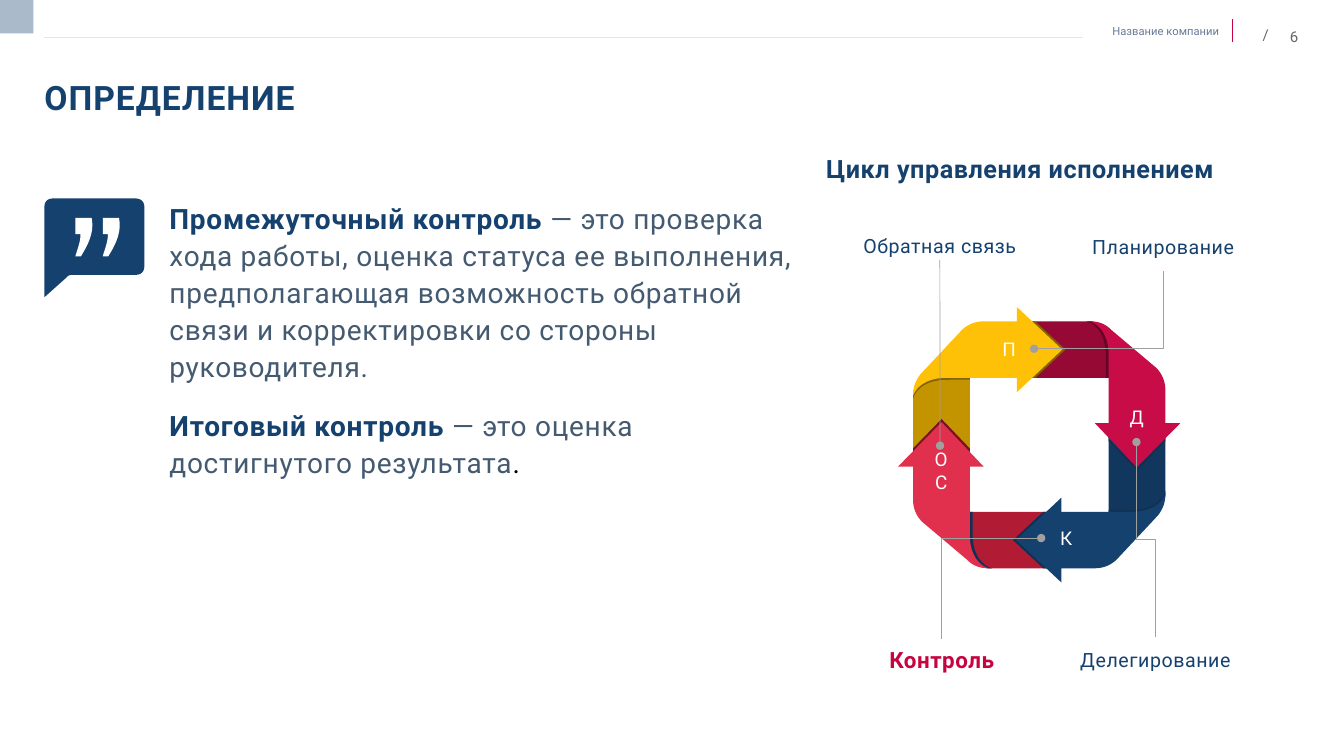
from lxml.etree import SubElement
from pptx import Presentation
from pptx.dml.color import RGBColor
from pptx.enum.shapes import MSO_CONNECTOR as Link, MSO_SHAPE as Shape
from pptx.enum.text import MSO_ANCHOR as Anchor, MSO_AUTO_SIZE as Fit, PP_ALIGN as Align
from pptx.oxml.ns import qn
from pptx.util import Cm, Pt

NAVY, RED, SLATE, WHITE, GREY = "15416F", "C60440", "445A71", "FFFFFF", "A0A0A0"
DEEP = "103153"

TITLE = "ОПРЕДЕЛЕНИЕ"
BODY = [
    [("Промежуточный контроль ", NAVY, True),
     ("— это проверка хода работы, оценка статуса ее выполнения, предполагающая "
      "возможность обратной связи и корректировки со стороны руководителя.", SLATE, False)],
    [("Итоговый контроль ", NAVY, True),
     ("— это оценка достигнутого результата", SLATE, False),
     (".", "000000", False)],
]

# text, box in cm, size, colour, bold, spacing, alignment, anchor, inset
HEAD = [
    ("Название компании", (27.25, 0.61, 3.48, 0.33), 8, "697A98", 0, Align.RIGHT, Anchor.MIDDLE, 0),
    ("6", (31.65, 0.76, 1.07, 0.33), 10.7, "666666", 40, Align.RIGHT, Anchor.MIDDLE, 0),
    ("/", (31.57, 0.51, 0.66, 0.71), 10.7, "666666", 0, Align.LEFT, Anchor.TOP, None),
]
RULES = [((31.06, 0.48), (31.06, 1.07), RED, 0.5),
         ((27.28, 0.94), (1.12, 0.94), "E7E6E6", 0.75)]
CYCLE = "Цикл управления исполнением"

# label, box, size, colour, bold, connector, start, end, turn, side of label joined
STAGES = [
    ("Контроль", (21.36, 16.1, 4.75, 0.94), 16, RED, True,
     "bentConnector2", (26.24, 13.56), (23.73, 16.1), 0, 0),
    ("Планирование", (26.47, 5.74, 5.69, 1.09), 14, NAVY, False,
     "bentConnector2", (26.06, 8.79), (29.31, 6.83), 0, 2),
    ("Делегирование", (26.06, 16.15, 6.12, 0.91), 14, NAVY, False,
     "bentConnector3", (31.34, 13.36), (26.42, 13.84), 270, None),
    ("Обратная связь", (21.31, 5.72, 4.75, 0.83), 14, NAVY, False,
     "line", (23.69, 11.23), (23.69, 6.55), 0, 2),
]
LETTERS = [("Д", 28.64, 10.5), ("П", 25.43, 8.8), ("ОС", 23.72, 11.85), ("К", 26.87, 13.55)]
BOX = 0.84

# Outlines: two numbers are a corner, six are a Bezier curve.
BUBBLE = [(1.12, 7.49), (1.68, 6.99), (1.73, 6.94, 1.75, 6.93, 1.8, 6.93), (3.38, 6.93),
          (3.56, 6.93, 3.64, 6.86, 3.64, 6.68), (3.64, 5.23),
          (3.64, 5.08, 3.56, 5, 3.38, 5), (1.37, 5), (1.19, 5, 1.12, 5.08, 1.12, 5.23)]
QUOTE = [(0, 0), (0.41, 0), (0.48, 0.36, 0.33, 0.66, 0.14, 0.97), (0, 0.97),
         (0.05, 0.79, 0.13, 0.61, 0.13, 0.41), (0, 0.41)]
QUOTES = [(1.9, 5.49), (2.59, 5.49)]

# Ring parts about the ring's centre: colour, colour of the half-turned twin, outline
CENTRE = (26.19, 11.21)
RING = [
    ("960935", "B11B33", [(1.8, -1.69), (-0.28, -1.69), (-0.28, -3.11), (1.27, -3.11),
                          (1.57, -3.11, 1.8, -2.86, 1.8, -2.58)]),
    ("C49300", "12375E", [(-1.75, -1.77), (-1.75, 0.27), (-3.18, 0.27), (-3.18, -1.23),
                          (-3.18, -1.51, -2.95, -1.77, -2.64, -1.77)]),
    ("836200", DEEP, [(-2.64, -1.74), (-1.75, -1.74), (-1.75, -1.64), (-2.24, -1.64),
                      (-2.9, -1.66, -3.12, -1.36, -3.18, -1.16), (-3.18, -1.24),
                      (-3.15, -1.54, -2.92, -1.74, -2.64, -1.74)]),
    ("640624", DEEP, [(1.8, -2.58), (1.8, -1.69), (1.68, -1.69), (1.68, -2.17),
                      (1.7, -2.81, 1.4, -3.06, 1.19, -3.11), (1.3, -3.11),
                      (1.57, -3.09, 1.8, -2.86, 1.8, -2.58)]),
    ("836200", DEEP, [(-0.1, -1.69), (-0.25, -1.69), (-0.25, -3.11), (-0.1, -3.11),
                      (0.66, -2.4)]),
    ("761222", DEEP, [(-3.18, 0.09), (-2.46, -0.65), (-1.75, 0.09), (-1.75, 0.27),
                      (-3.18, 0.27)]),
    ("FFC107", NAVY, [(-3, -1.77), (-1.98, -2.86), (-1.85, -3.01, -1.63, -3.11, -1.42, -3.11),
                      (-0.56, -3.11), (-0.56, -3.47), (0.58, -2.4), (-0.56, -1.33),
                      (-0.56, -1.69), (-2.24, -1.69),
                      (-2.9, -1.71, -3.12, -1.41, -3.18, -1.23), (-3.18, -1.26),
                      (-3.18, -1.44, -3.12, -1.61, -3, -1.77)]),
    ("C80C47", "E0304D", [(1.75, -2.17), (1.78, -2.81, 1.47, -3.06, 1.27, -3.11), (1.3, -3.11),
                          (1.5, -3.11, 1.68, -3.04, 1.8, -2.91), (2.95, -1.94),
                          (3.1, -1.79, 3.18, -1.59, 3.18, -1.38), (3.18, -0.55),
                          (3.56, -0.55), (2.46, 0.57), (1.4, -0.55), (1.75, -0.55)]),
]


def rgb(code):
    return RGBColor.from_string(code)


def style(item, **values):
    for name, value in values.items():
        setattr(item, name, value)


def paint(shape, color):
    shape.shadow.inherit = False
    shape.fill.solid()
    shape.fill.fore_color.rgb = rgb(color)
    shape.line.fill.background()


def add_run(para, text, size, color, bold=False, gap=0):
    run = para.add_run()
    run.text = text
    style(run.font, name="Roboto", size=Pt(size), bold=bold)
    run.font.color.rgb = rgb(color)
    if gap:
        run.font._element.set("spc", str(gap))


def inset(frame, left, top, right, bottom):
    style(frame, margin_left=Cm(left), margin_top=Cm(top),
          margin_right=Cm(right), margin_bottom=Cm(bottom))


def add_text(box, text, size, color, bold=False, gap=0, align=Align.LEFT,
             anchor=Anchor.TOP, pad=None, wrap=True, **para):
    shape = shapes.add_textbox(*map(Cm, box))
    frame = shape.text_frame
    style(frame, word_wrap=wrap, vertical_anchor=anchor)
    if pad is not None:
        inset(frame, pad, pad, pad, pad)
    first = frame.paragraphs[0]
    style(first, alignment=align, **para)
    add_run(first, text, size, color, bold, gap)
    return shape


def trace(outline, steps=10):
    """Turn corners and curves into a list of points."""
    points = [outline[0]]
    for part in outline[1:]:
        if len(part) == 2:
            points.append(part)
            continue
        knots = [points[-1], part[:2], part[2:4], part[4:]]
        for t in (i / steps for i in range(1, steps + 1)):
            mix = ((1 - t) ** 3, 3 * t * (1 - t) ** 2, 3 * t * t * (1 - t), t ** 3)
            points.append(tuple(sum(m * k[axis] for m, k in zip(mix, knots)) for axis in (0, 1)))
    return points


def add_form(outline, color, origin=(0, 0), sign=1):
    first, *rest = [tuple(Cm(o + sign * v) for o, v in zip(origin, point))
                    for point in trace(outline)]
    form = shapes.build_freeform(*first)
    form.add_line_segments(rest, close=True)
    paint(form.convert_to_shape(), color)


def add_line(start, end, color, width, preset="line"):
    line = shapes.add_connector(Link.STRAIGHT, *map(Cm, start + end))
    line.line.color.rgb = rgb(color)
    line.line.width = Pt(width)
    props = line._element.spPr
    props.find(qn("a:prstGeom")).set("prst", preset)
    SubElement(props, qn("a:effectLst"))
    return line


def place(holder, box):
    style(holder, **dict(zip(("left", "top", "width", "height"), map(Cm, box))))
    style(holder.text_frame, auto_size=Fit.NONE, word_wrap=True, vertical_anchor=Anchor.TOP)
    return holder.text_frame


deck = Presentation()
style(deck, slide_width=Cm(33.87), slide_height=Cm(19.05))
slide = deck.slides.add_slide(deck.slide_layouts[1])
shapes = slide.shapes

for start, end, color, width in RULES:
    add_line(start, end, color, width)
paint(shapes.add_shape(Shape.RECTANGLE, 0, 0, Cm(0.84), Cm(0.84)), "AABACA")
for text, box, size, color, gap, align, anchor, pad in HEAD:
    add_text(box, text, size, color, False, gap, align, anchor, pad)

frame = place(shapes.title, (1.12, 1.93, 14.81, 1.02))
inset(frame, 0, 0, 0, 0)
frame.paragraphs[0].alignment = Align.LEFT
add_run(frame.paragraphs[0], TITLE, 24, NAVY, True, 70)

frame = place(slide.placeholders[1], (4.27, 5, 16.18, 13.21))
inset(frame, 0, 0, 0.25, 0.13)
for i, runs in enumerate(BODY):
    para = frame.add_paragraph() if i else frame.paragraphs[0]
    style(para, line_spacing=1.1, space_before=Pt(0), space_after=Pt(16))
    props = para._element.get_or_add_pPr()
    props.set("marL", "0")
    props.set("indent", "0")
    SubElement(props, qn("a:buNone"))
    for text, color, bold in runs:
        add_run(para, text, 20, color, bold, 50)

add_form(BUBBLE, NAVY)
for spot in QUOTES:
    add_form(QUOTE, WHITE, spot)
for color, twin, outline in RING:
    add_form(outline, color, CENTRE)
    add_form(outline, twin, CENTRE, -1)

for text, x, y in LETTERS:
    add_text((x - BOX / 2, y - BOX / 2, BOX, BOX), text, 13.5, WHITE,
             align=Align.CENTER, anchor=Anchor.MIDDLE)
add_text((20.57, 3.73, 10.69, 1.02), CYCLE, 18, NAVY, True, 40, wrap=False)
for text, box, size, color, bold, preset, start, end, turn, side in STAGES:
    label = add_text(box, text, size, color, bold, 40, Align.CENTER,
                     line_spacing=1.1, space_after=Pt(6))
    lead = add_line(start, end, GREY, 0.5, preset)
    SubElement(lead.line._get_or_add_ln(), qn("a:headEnd"), type="oval")
    if turn:
        lead._element.spPr.find(qn("a:xfrm")).set("rot", str(turn * 60000))
    if side is not None:
        lead.end_connect(label, side)

deck.save("out.pptx")
